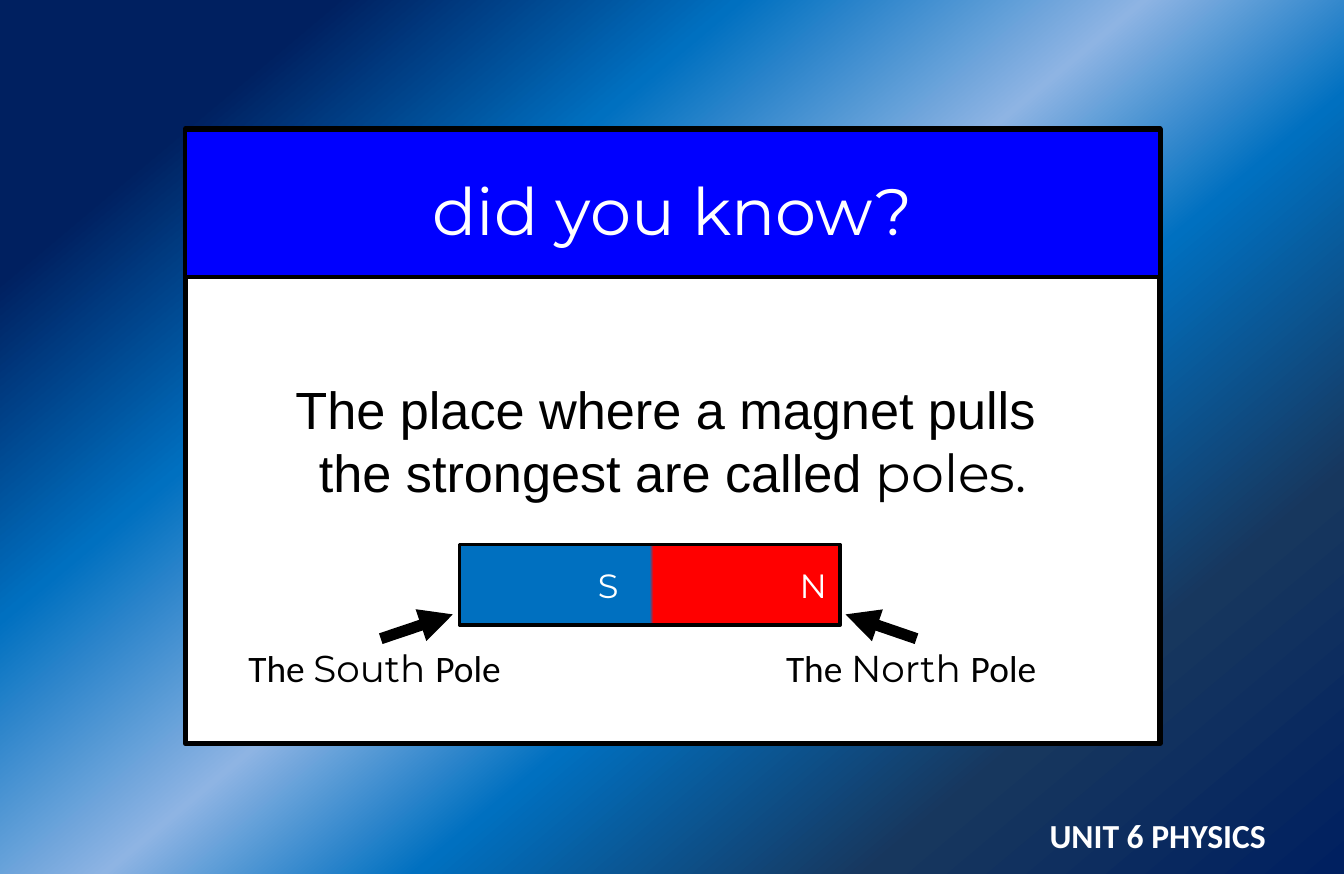
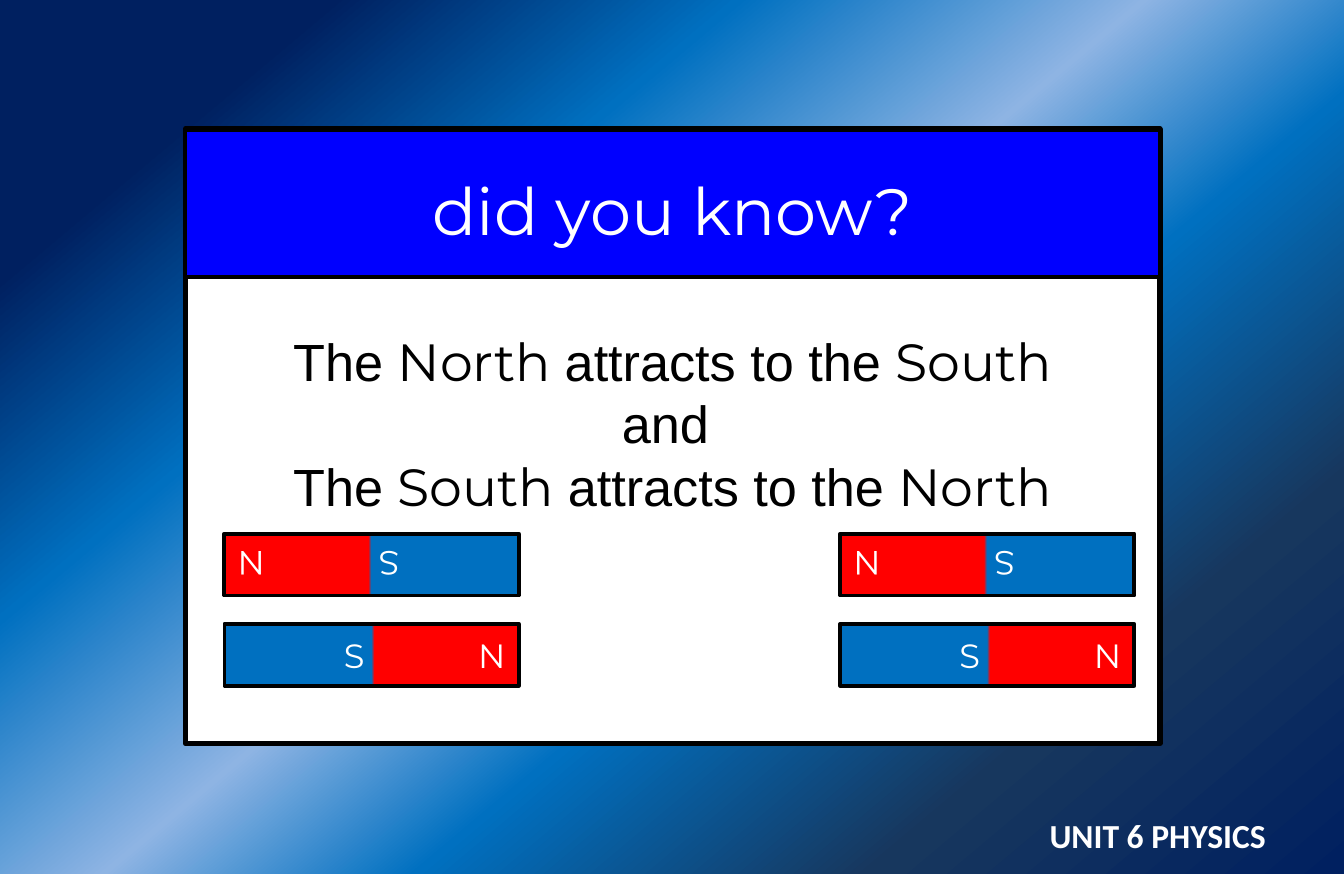
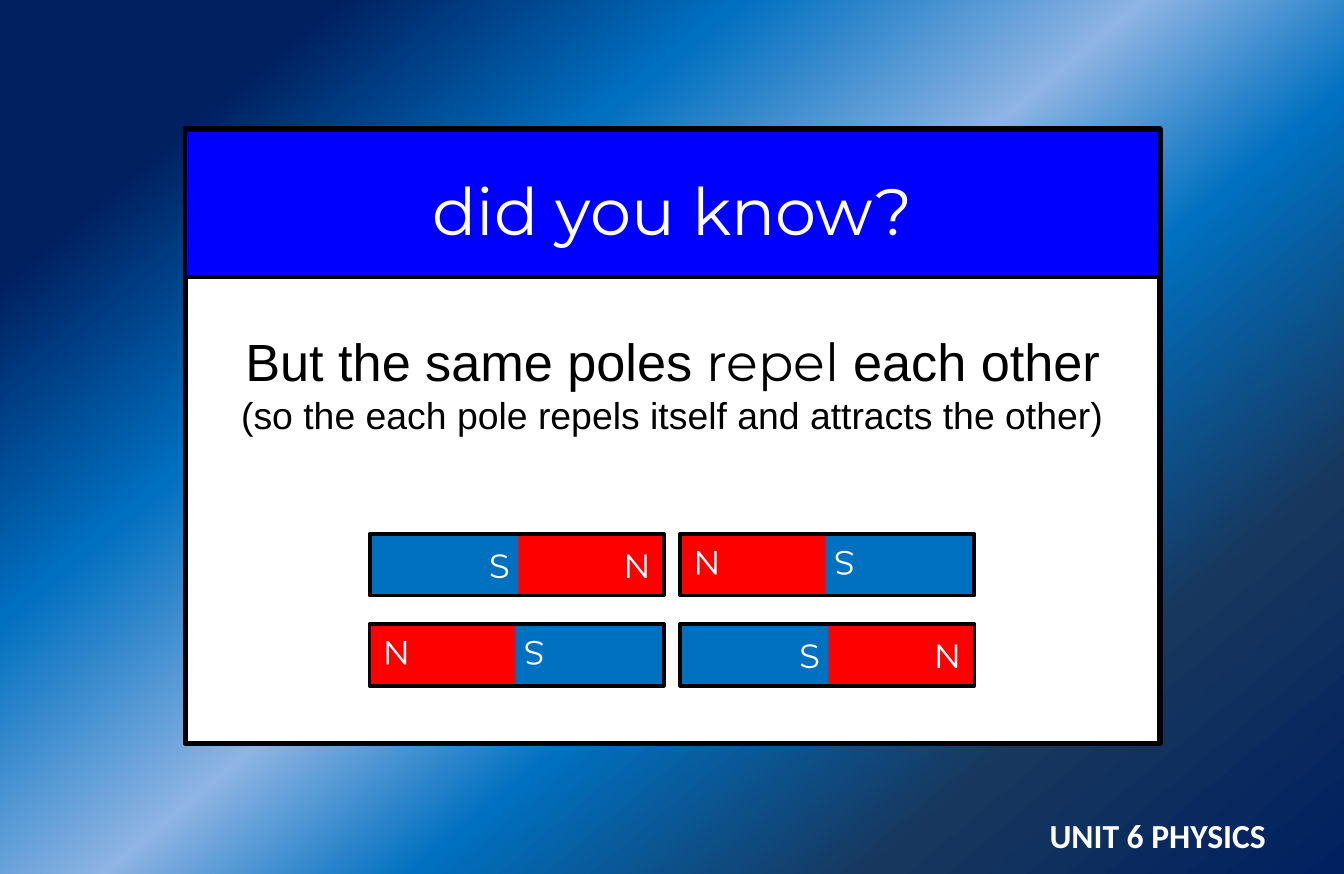
import pptx
import pptx.util
import pptx.dml.color
import pptx.enum.shapes
import pptx.enum.text
import pptx.oxml.ns
import lxml.etree

Pt = pptx.util.Pt
Color = pptx.dml.color.RGBColor
Shape = pptx.enum.shapes.MSO_SHAPE
Align = pptx.enum.text.PP_ALIGN
Anchor = pptx.enum.text.MSO_ANCHOR
qn = pptx.oxml.ns.qn

BLACK = Color(0x00, 0x00, 0x00)
WHITE = Color(0xFF, 0xFF, 0xFF)
BLUE = Color(0x00, 0x00, 0xFF)
NAVY = Color(0x00, 0x20, 0x60)
SLATE = Color(0x17, 0x37, 0x5E)
SOUTH = Color(0x00, 0x70, 0xC0)
PALE = Color(0x8E, 0xB4, 0xE3)
NORTH = Color(0xFF, 0x00, 0x00)

SKY = [(0, NAVY), (20, SLATE), (39, SOUTH), (52, PALE), (69, SOUTH), (86, NAVY), (98, NAVY)]
POLES = [(0, SOUTH), (50, SOUTH), (51, NORTH), (100, NORTH)]
SANS, ROUND, LABEL = "Arial", "Montserrat", "Calibri"


def blend(node, fill, stops, angle):
    fill.gradient()
    fill.gradient_angle = angle
    ramp = next(node.iter(qn("a:gsLst")))
    for old in list(ramp):
        ramp.remove(old)
    for place, color in stops:
        stop = lxml.etree.SubElement(ramp, qn("a:gs"), pos=str(place * 1000))
        lxml.etree.SubElement(stop, qn("a:srgbClr"), val=str(color))


def block(slide, box, line, text="", size=18, align=Align.CENTER):
    shape = slide.shapes.add_shape(Shape.RECTANGLE, *map(Pt, box))
    shape.shadow.inherit = False
    shape.line.color.rgb = BLACK
    shape.line.width = Pt(line)
    shape.text_frame.vertical_anchor = Anchor.MIDDLE
    para = shape.text_frame.paragraphs[0]
    para.text = text
    para.alignment = align
    para.font.name = ROUND
    para.font.size = Pt(size)
    para.font.color.rgb = WHITE
    return shape


ROWS = (285.8, 334.1)
BAR = (157.7, 33.1)
FACTS = [
    (133, [
        [("The place where a magnet pulls ", SANS, 28)],
        [("the strongest are called ", SANS, 28), ("poles.", ROUND, 28)],
    ], [(246.2, 291.6, 203.8, 43.2, 180, "S\t\t\tN")]),
    (107, [
        [("The ", SANS, 28), ("North ", ROUND, 28), ("attracts to the ", SANS, 28), ("South", ROUND, 28)],
        [("and ", SANS, 28)],
        [("The ", SANS, 28), ("South ", ROUND, 28), ("attracts to the ", SANS, 28), ("North", ROUND, 28)],
    ], [(x, y, *BAR, turn, "S\t\tN") for x in (120.2, 450) for y, turn in zip(ROWS, (0, 180))]),
    (107, [
        [("But the same poles ", SANS, 28), ("repel ", ROUND, 28), ("each other", SANS, 28)],
        [("(so the each pole repels itself and attracts the other)", SANS, 20)],
    ], [(x, y, *BAR, turn, "S\t\tN")
        for x, turns in ((198, (180, 0)), (364.3, (0, 180))) for y, turn in zip(ROWS, turns)]),
]

deck = pptx.Presentation()
deck.slide_width = Pt(720)
deck.slide_height = Pt(468)

for inset, lines, magnets in FACTS:
    slide = deck.slides.add_slide(deck.slide_layouts[6])
    blend(slide.element, slide.background.fill, SKY, 130)

    card = block(slide, (99.3, 69.1, 522, 329), 3)
    card.fill.solid()
    card.fill.fore_color.rgb = WHITE
    frame = card.text_frame
    frame.vertical_anchor = Anchor.TOP
    frame.margin_top = Pt(inset)
    para = frame.paragraphs[0]
    para.font.color.rgb = BLACK
    for index, line in enumerate(lines):
        if index:
            para.add_line_break()
        for text, face, size in line:
            run = para.add_run()
            run.text = text
            run.font.name = face
            run.font.size = Pt(size)

    band = block(slide, (99.3, 69.8, 522, 78.5), 2, "did you know?", 35)
    band.fill.solid()
    band.fill.fore_color.rgb = BLUE
    para = band.text_frame.paragraphs[0]
    para.line_spacing = 1.15
    para.space_after = Pt(8.1)

    foot = slide.shapes.add_textbox(Pt(516.2), Pt(433.4), Pt(167.8), Pt(25.2))
    frame = foot.text_frame
    frame.word_wrap = True
    frame.margin_left = frame.margin_right = Pt(5.8)
    frame.margin_top = frame.margin_bottom = Pt(2.9)
    para = frame.paragraphs[0]
    para.text = "UNIT 6 PHYSICS"
    para.alignment = Align.RIGHT
    para.font.name = LABEL
    para.font.size = Pt(18)
    para.font.bold = True
    para.font.color.rgb = WHITE

    for *box, turn, text in magnets:
        bar = block(slide, box, 2, text, 18, Align.RIGHT)
        bar.rotation = turn
        next(bar.element.iter(qn("a:xfrm"))).set("flipV", "1")
        blend(bar.element, bar.fill, POLES, 180)

slide = deck.slides[0]
for pole, left, width, start, end in (
    ("North ", 414, 154.8, 491, 453),
    ("South ", 126, 156.2, 204, 242.6),
):
    label = slide.shapes.add_textbox(Pt(left), Pt(342), Pt(width), Pt(31.7))
    label.text_frame.word_wrap = False
    label.text_frame.auto_size = pptx.enum.text.MSO_AUTO_SIZE.SHAPE_TO_FIT_TEXT
    para = label.text_frame.paragraphs[0]
    para.font.size = Pt(20)
    para.font.color.rgb = BLACK
    for text, face in (("The ", LABEL), (pole, ROUND), ("Pole", LABEL)):
        run = para.add_run()
        run.text = text
        run.font.name = face

    arrow = slide.shapes.add_connector(
        pptx.enum.shapes.MSO_CONNECTOR.STRAIGHT, Pt(start), Pt(342), Pt(end), Pt(329))
    arrow.line.color.rgb = BLACK
    arrow.line.width = Pt(6)
    lxml.etree.SubElement(arrow.line._ln, qn("a:tailEnd"), type="triangle")
    lxml.etree.SubElement(arrow.element.spPr, qn("a:effectLst"))

deck.save("out.pptx")
